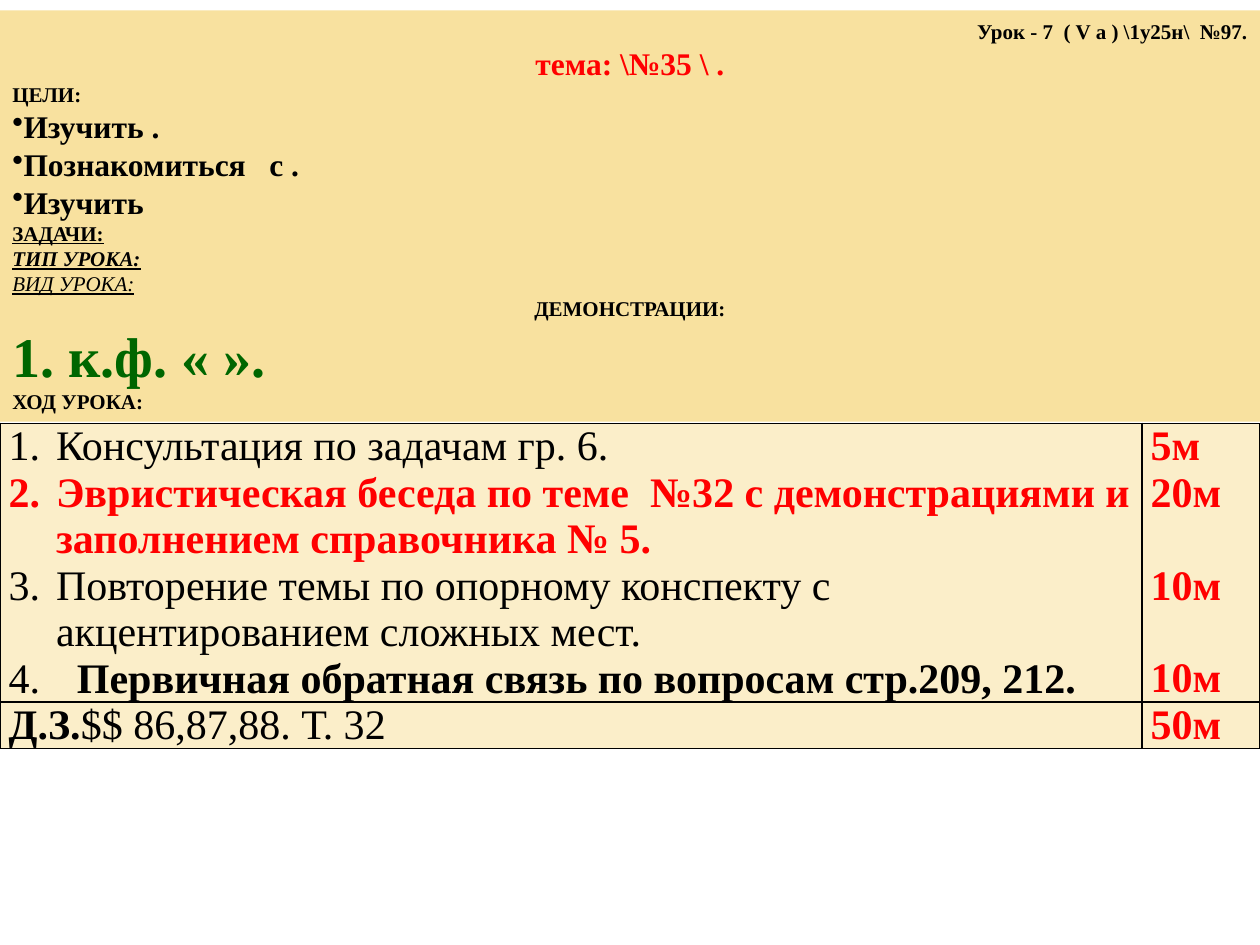
from dataclasses import dataclass

from lxml.etree import SubElement
from pptx import Presentation
from pptx.dml.color import RGBColor
from pptx.enum.shapes import MSO_SHAPE
from pptx.enum.text import MSO_ANCHOR, MSO_AUTO_SIZE, PP_ALIGN
from pptx.oxml.ns import qn
from pptx.util import Pt


@dataclass(frozen=True)
class Theme:
    font: str = "Times New Roman"
    black: str = "000000"
    red: str = "FF0000"
    green: str = "006600"
    panel: str = "F8E19F"
    cell: str = "FBEEC9"
    small: int = 12
    medium: int = 18
    table: int = 24
    large: int = 32


THEME = Theme()


@dataclass(frozen=True)
class Span:
    text: str
    size: int = THEME.small
    color: str = THEME.black
    bold: bool = True
    italic: bool = False
    underline: bool = False


@dataclass(frozen=True)
class Line:
    spans: tuple[Span, ...]
    align: PP_ALIGN = PP_ALIGN.LEFT
    bullet: bool = False
    number_indent: float = 0
    space_before: float = 0


def line(text: str, align: PP_ALIGN = PP_ALIGN.LEFT, bullet: bool = False, **style) -> Line:
    return Line((Span(text, **style),), align, bullet)


def step(*spans: Span, indent: float = 27) -> Line:
    return Line(spans, number_indent=indent)


def entry(text: str, color: str = THEME.black, bold: bool = True) -> Span:
    return Span(text, THEME.table, color, bold)


def duration(text: str, space_before: float = 0) -> Line:
    return Line((entry(text, THEME.red),), space_before=space_before)


def style_font(font, span: Span) -> None:
    font.name = THEME.font
    font.size = Pt(span.size)
    font.color.rgb = RGBColor.from_string(span.color)
    font.bold = span.bold
    font.italic = span.italic
    font.underline = span.underline


def write_lines(frame, lines: tuple[Line, ...]) -> None:
    for index, item in enumerate(lines):
        para = frame.paragraphs[0] if index == 0 else frame.add_paragraph()
        para.alignment = item.align
        para.space_before = Pt(item.space_before)
        properties = para._p.get_or_add_pPr()
        if item.bullet:
            SubElement(properties, qn("a:buChar"), char="•")
        elif item.number_indent:
            properties.set("marL", str(Pt(item.number_indent)))
            properties.set("indent", str(-Pt(item.number_indent)))
            SubElement(properties, qn("a:buFont"), typeface=THEME.font)
            SubElement(properties, qn("a:buAutoNum"), type="arabicPeriod")
        shared = len(item.spans) == 1 and not item.number_indent
        if shared:
            style_font(para.font, item.spans[0])
        for span in item.spans:
            run = para.add_run()
            run.text = span.text
            if not shared:
                style_font(run.font, span)


def add_borders(cell) -> None:
    properties = cell._tc.get_or_add_tcPr()
    for position, side in enumerate(("lnL", "lnR", "lnT", "lnB")):
        border = properties.makeelement(qn(f"a:{side}"), {"w": str(Pt(1))})
        fill = SubElement(border, qn("a:solidFill"))
        SubElement(fill, qn("a:srgbClr"), val=THEME.black)
        properties.insert(position, border)


def add_lesson_panel(page, lines: tuple[Line, ...]) -> None:
    panel = page.shapes.add_shape(MSO_SHAPE.RECTANGLE, Pt(0), Pt(6), Pt(720), Pt(235))
    panel.shadow.inherit = False
    panel.fill.solid()
    panel.fill.fore_color.rgb = RGBColor.from_string(THEME.panel)
    panel.line.fill.background()
    frame = panel.text_frame
    frame.word_wrap = True
    frame.auto_size = MSO_AUTO_SIZE.SHAPE_TO_FIT_TEXT
    frame.vertical_anchor = MSO_ANCHOR.MIDDLE
    write_lines(frame, lines)


def add_schedule(page, rows: tuple[tuple[tuple[Line, ...], ...], ...]) -> None:
    widths, heights = (652.5, 67.5), (159, 26.5)
    table = page.shapes.add_table(
        len(rows), len(widths), Pt(0), Pt(242), Pt(sum(widths)), Pt(sum(heights))
    ).table
    table.first_row = False
    table.horz_banding = False
    for column, width in zip(table.columns, widths):
        column.width = Pt(width)
    for row, height, contents in zip(table.rows, heights, rows):
        row.height = Pt(height)
        for cell, lines in zip(row.cells, contents):
            cell.margin_left = cell.margin_right = Pt(5)
            cell.margin_top = cell.margin_bottom = Pt(0)
            cell.fill.solid()
            cell.fill.fore_color.rgb = RGBColor.from_string(THEME.cell)
            add_borders(cell)
            write_lines(cell.text_frame, lines)


LESSON = (
    line("Урок - 7  ( V а ) \\1у25н\\  №97.", PP_ALIGN.RIGHT),
    line("тема: \\№35 \\ .", PP_ALIGN.CENTER, size=THEME.medium, color=THEME.red),
    line("ЦЕЛИ:"),
    *(
        line(goal, bullet=True, size=THEME.medium)
        for goal in ("Изучить .", "Познакомиться   с .", "Изучить")
    ),
    line("ЗАДАЧИ:", underline=True),
    line("ТИП УРОКА:", italic=True, underline=True),
    line("ВИД УРОКА:", bold=False, italic=True, underline=True),
    line("ДЕМОНСТРАЦИИ:", PP_ALIGN.CENTER),
    line("1. к.ф. « ».", size=THEME.large, color=THEME.green),
    line("ХОД УРОКА:"),
)

STEPS = (
    step(entry("Консультация по задачам гр. 6.", bold=False)),
    step(
        entry(
            "Эвристическая беседа по теме  №32 с демонстрациями и "
            "заполнением справочника № 5.",
            THEME.red,
        )
    ),
    step(
        entry(
            "Повторение темы по опорному конспекту с "
            "акцентированием сложных мест.",
            bold=False,
        )
    ),
    step(
        entry(" ", bold=False),
        entry("Первичная обратная связь по вопросам стр.209, 212."),
        indent=33,
    ),
)

WRAPPED_LINE = 26.5
DURATIONS = (
    duration("5м"),
    duration("20м"),
    duration("10м", WRAPPED_LINE),
    duration("10м", WRAPPED_LINE),
)
HOMEWORK = (Line((entry("Д.З."), entry("$$ 86,87,88. Т. 32", bold=False))),)


def main() -> None:
    deck = Presentation()
    deck.slide_width, deck.slide_height = Pt(720), Pt(540)
    page = deck.slides.add_slide(deck.slide_layouts[6])
    add_schedule(page, ((STEPS, DURATIONS), (HOMEWORK, (duration("50м"),))))
    add_lesson_panel(page, LESSON)
    deck.save("out.pptx")


if __name__ == "__main__":
    main()
